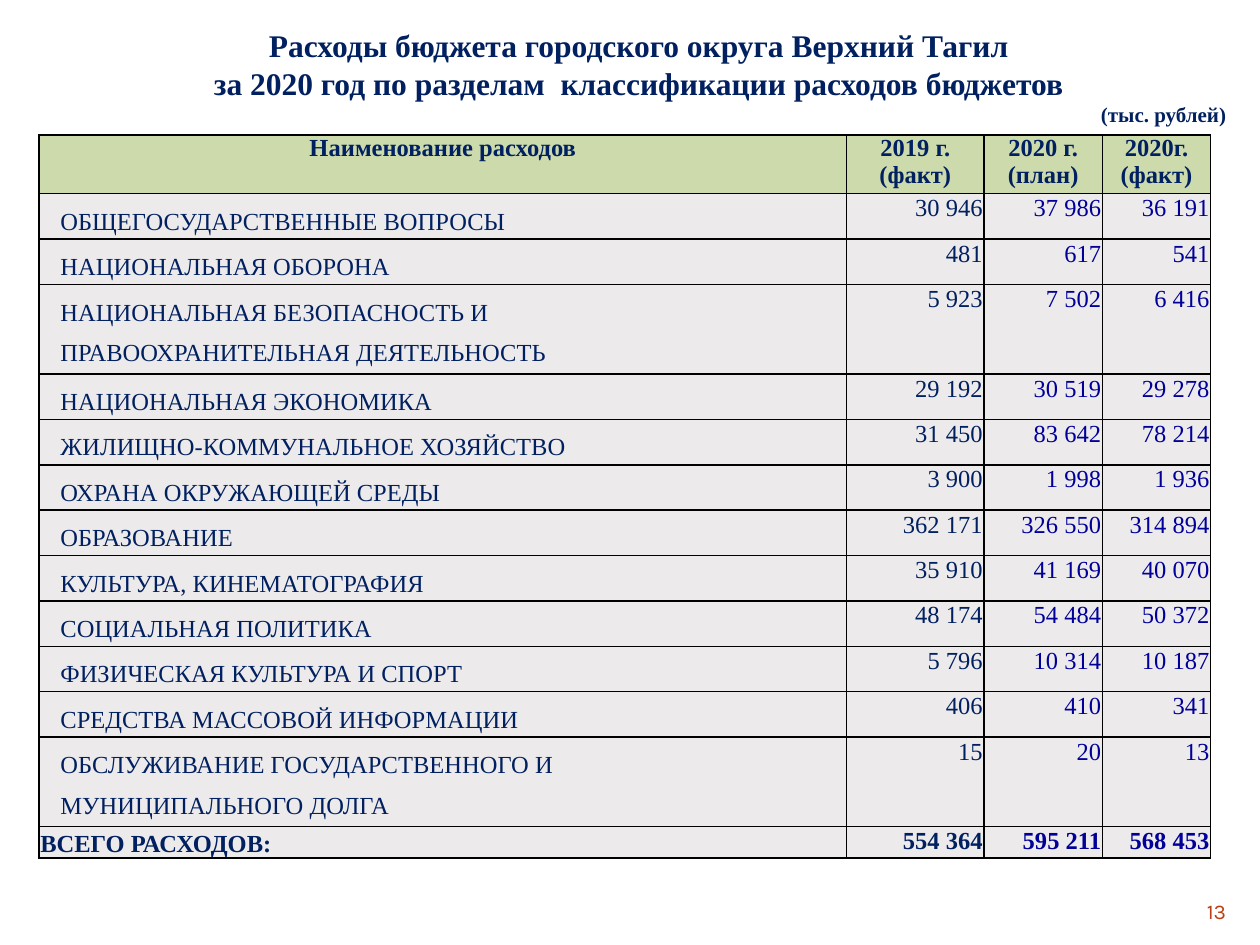
from lxml import etree
from pptx import Presentation
from pptx.dml.color import RGBColor
from pptx.enum.text import MSO_ANCHOR as Anchor, PP_ALIGN as Align
from pptx.oxml.ns import qn
from pptx.util import Inches, Pt

SERIF = "Times New Roman"
NAVY, BLUE, RUST = "002060", "000099", "BA4014"
GREEN, GREY, BLACK = "CCDAAC", "E9E6E7", "000000"

COLUMN_WIDTHS = [6.41, 1.09, 0.94, 0.86]
HEADERS = ["Наименование расходов", "2019 г.\n(факт)", "2020 г.\n(план)", "2020г.\n(факт)"]
EXPENSES = [
    ("ОБЩЕГОСУДАРСТВЕННЫЕ ВОПРОСЫ", "30 946", "37 986", "36 191"),
    ("НАЦИОНАЛЬНАЯ ОБОРОНА", "481", "617", "541"),
    ("НАЦИОНАЛЬНАЯ БЕЗОПАСНОСТЬ И\nПРАВООХРАНИТЕЛЬНАЯ ДЕЯТЕЛЬНОСТЬ", "5 923", "7 502", "6 416"),
    ("НАЦИОНАЛЬНАЯ ЭКОНОМИКА", "29 192", "30 519", "29 278"),
    ("ЖИЛИЩНО-КОММУНАЛЬНОЕ ХОЗЯЙСТВО", "31 450", "83 642", "78 214"),
    ("ОХРАНА ОКРУЖАЮЩЕЙ СРЕДЫ", "3 900", "1 998", "1 936"),
    ("ОБРАЗОВАНИЕ", "362 171", "326 550", "314 894"),
    ("КУЛЬТУРА, КИНЕМАТОГРАФИЯ", "35 910", "41 169", "40 070"),
    ("СОЦИАЛЬНАЯ ПОЛИТИКА", "48 174", "54 484", "50 372"),
    ("ФИЗИЧЕСКАЯ КУЛЬТУРА И СПОРТ", "5 796", "10 314", "10 187"),
    ("СРЕДСТВА МАССОВОЙ ИНФОРМАЦИИ", "406", "410", "341"),
    ("ОБСЛУЖИВАНИЕ ГОСУДАРСТВЕННОГО И\nМУНИЦИПАЛЬНОГО ДОЛГА", "15", "20", "13"),
]
TOTAL = ("ВСЕГО РАСХОДОВ:", "554 364", "595 211", "568 453")


def rgb(value):
    """Turn a hex string into a colour."""
    return RGBColor.from_string(value)


def write(p, text, size=14, font=SERIF, color=NAVY, bold=False, align=Align.LEFT, spacing=None):
    """Write one formatted run into a paragraph."""
    p.alignment = align
    if spacing:
        p.line_spacing = spacing
    r = p.add_run()
    r.text = text
    r.font.size, r.font.name, r.font.bold = Pt(size), font, bold
    r.font.color.rgb = rgb(color)


def write_lines(tf, text, **style):
    """Write each line of the text as its own paragraph."""
    for i, line in enumerate(text.split("\n")):
        write(tf.add_paragraph() if i else tf.paragraphs[0], line, **style)


def add_text_box(s, left, top, width, height):
    """Add a wrapping text box and return its text frame."""
    sp = s.shapes.add_textbox(Inches(left), Inches(top), Inches(width), Inches(height))
    sp.text_frame.word_wrap = True
    return sp.text_frame


def add_borders(cell):
    """Draw a thin black line on every side of a cell."""
    tc_pr = cell._tc.get_or_add_tcPr()
    for side in ("lnL", "lnR", "lnT", "lnB"):
        line = etree.SubElement(tc_pr, qn(f"a:{side}"), w=str(Pt(1)))
        fill = etree.SubElement(line, qn("a:solidFill"))
        etree.SubElement(fill, qn("a:srgbClr"), val=BLACK)


def format_cell(cell, text, fill, alpha=100, margins=(0.01, 0.01, 0.01, 0), **style):
    """Set the text, borders, fill and margins of a cell."""
    cell.margin_left, cell.margin_top, cell.margin_right, cell.margin_bottom = map(Inches, margins)
    add_borders(cell)
    cell.fill.solid()
    cell.fill.fore_color.rgb = rgb(fill)
    if alpha < 100:
        color = cell._tc.tcPr.find(qn("a:solidFill"))[0]
        etree.SubElement(color, qn("a:alpha"), val=str(alpha * 1000))
    write_lines(cell.text_frame, text, **style)


def format_amounts(row, amounts, bold=False):
    """Fill the three number cells of a row."""
    for col, amount in enumerate(amounts, 1):
        format_cell(row.cells[col], amount, GREY, alpha=81, bold=bold, align=Align.RIGHT,
                    color=NAVY if col == 1 else BLUE)


def add_expense_table(s):
    """Add the table of expenses by section."""
    heights = [0.46, *(0.71 if "\n" in row[0] else 0.36 for row in EXPENSES), 0.25]
    frame = s.shapes.add_table(len(heights), len(COLUMN_WIDTHS), Inches(0.31), Inches(1.07),
                               Inches(sum(COLUMN_WIDTHS)), Inches(sum(heights)))
    table = frame.table
    for column, width in zip(table.columns, COLUMN_WIDTHS):
        column.width = Inches(width)
    for row, height in zip(table.rows, heights):
        row.height = Inches(height)

    header, *body, total = table.rows
    for cell, text in zip(header.cells, HEADERS):
        format_cell(cell, text, GREEN, margins=(0.05, 0, 0.05, 0), bold=True, align=Align.CENTER)
    for row, (name, *amounts) in zip(body, EXPENSES):
        format_cell(row.cells[0], name, GREY, alpha=81, margins=(0.17, 0.01, 0.01, 0), spacing=1.5)
        format_amounts(row, amounts)
    format_cell(total.cells[0], TOTAL[0], GREY, alpha=81, bold=True)
    total.cells[0].vertical_anchor = Anchor.BOTTOM
    format_amounts(total, TOTAL[1:], bold=True)


def main():
    """Build the slide and save it."""
    prs = Presentation()
    prs.slide_width, prs.slide_height = Inches(10), Inches(7.5)
    s = prs.slides.add_slide(prs.slide_layouts[6])

    write_lines(add_text_box(s, 9, 7.08, 0.83, 0.27), "13",
                size=12, font="Karla", color=RUST, align=Align.RIGHT)
    title = add_text_box(s, 0.31, 0.16, 9.52, 0.91)
    write_lines(title, "Расходы бюджета городского округа Верхний Тагил\n"
                "за 2020 год по разделам  классификации расходов бюджетов",
                size=18, bold=True, align=Align.CENTER)
    write(title.add_paragraph(), "(тыс. рублей)", size=12, bold=True, align=Align.RIGHT)
    add_expense_table(s)
    prs.save("out.pptx")


if __name__ == "__main__":
    main()
